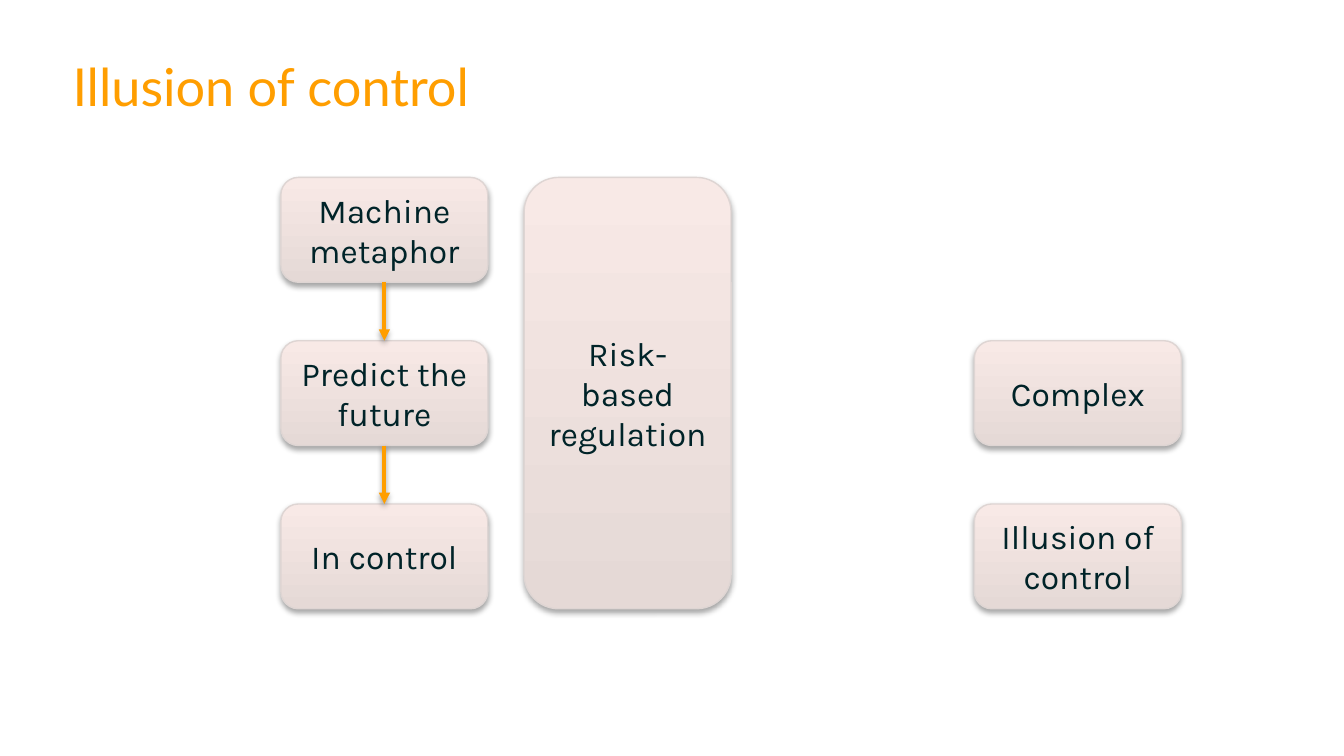
import pptx
import pptx.dml.color
import pptx.enum.shapes
import pptx.enum.text
import pptx.oxml
import pptx.oxml.ns
import pptx.util

Inches, Pt = pptx.util.Inches, pptx.util.Pt
qn = pptx.oxml.ns.qn
NS = pptx.oxml.ns.nsdecls("a")


def color(code):
    return pptx.dml.color.RGBColor.from_string(code)


def shade(shape, dist, alpha):
    """Give a shape or connector a soft shadow straight below it."""
    shape._element.spPr.append(pptx.oxml.parse_xml(
        f'<a:effectLst {NS}><a:outerShdw blurRad="{Pt(3.1)}" dist="{Pt(dist)}" '
        f'dir="5400000" rotWithShape="0"><a:srgbClr val="000000">'
        f'<a:alpha val="{alpha * 1000}"/></a:srgbClr></a:outerShdw></a:effectLst>'))


# Slide in the 16:9 format
deck = pptx.Presentation()
deck.slide_width = Inches(10)
deck.slide_height = deck.slide_width * 9 // 16
slide = deck.slides.add_slide(deck.slide_layouts[6])

# Title
title = slide.shapes.add_textbox(Inches(0.54), Inches(0.43), Inches(8.94), Inches(0.63))
frame = title.text_frame
frame.word_wrap = True
frame.margin_left = frame.margin_right = frame.margin_top = frame.margin_bottom = 0
frame.text = "Illusion of control"
para = frame.paragraphs[0]
para.line_spacing = Pt(32)
font = para.runs[0].font
font.name, font.size = "Lato", Pt(28)
font.color.rgb = color("FF9E00")

# Grid: three columns, three rows; the tall box spans every row
cols = [2.09, 3.9, 7.25]
top, wide, high, tall = 1.32, 1.54, 0.78, 3.21
step = (tall - high) / 2

# Boxes: text, column, row, height
cells = [
    ("Machine metaphor", 0, 0, high),
    ("Predict the future", 0, 1, high),
    ("In control", 0, 2, high),
    ("Risk-based regulation", 1, 0, tall),
    ("Complex", 2, 1, high),
    ("Illusion of control", 2, 2, high),
]
boxes = []
for text, col, row, size in cells:
    box = slide.shapes.add_shape(
        pptx.enum.shapes.MSO_SHAPE.ROUNDED_RECTANGLE,
        Inches(cols[col]), Inches(top + row * step), Inches(wide), Inches(size))
    box.fill.gradient()
    box.fill.gradient_angle = 90
    for stop, code in zip(box.fill.gradient_stops, ("E5D9D6", "F8E9E6")):
        stop.color.rgb = color(code)
    box.line.color.rgb = color("DED5D3")
    box.line.width = Pt(0.75)
    shade(box, 1.8, 35)
    frame = box.text_frame
    frame.word_wrap = True
    frame.vertical_anchor = pptx.enum.text.MSO_ANCHOR.MIDDLE
    frame.text = text
    para = frame.paragraphs[0]
    para.alignment = pptx.enum.text.PP_ALIGN.CENTER
    font = para.runs[0].font
    font.name, font.size = "Karla", Pt(18)
    font.color.rgb = color("002328")
    boxes.append(box)

# Arrows down the first column
for start, end in zip(boxes[:2], boxes[1:3]):
    arrow = slide.shapes.add_connector(pptx.enum.shapes.MSO_CONNECTOR.STRAIGHT, 0, 0, 0, 0)
    arrow.begin_connect(start, 2)
    arrow.end_connect(end, 0)
    arrow.line.color.rgb = color("FF9E00")
    arrow.line.width = Pt(2)
    arrow._element.spPr.find(qn("a:ln")).append(
        pptx.oxml.parse_xml(f'<a:tailEnd {NS} type="triangle"/>'))
    shade(arrow, 1.6, 38)

deck.save("out.pptx")
